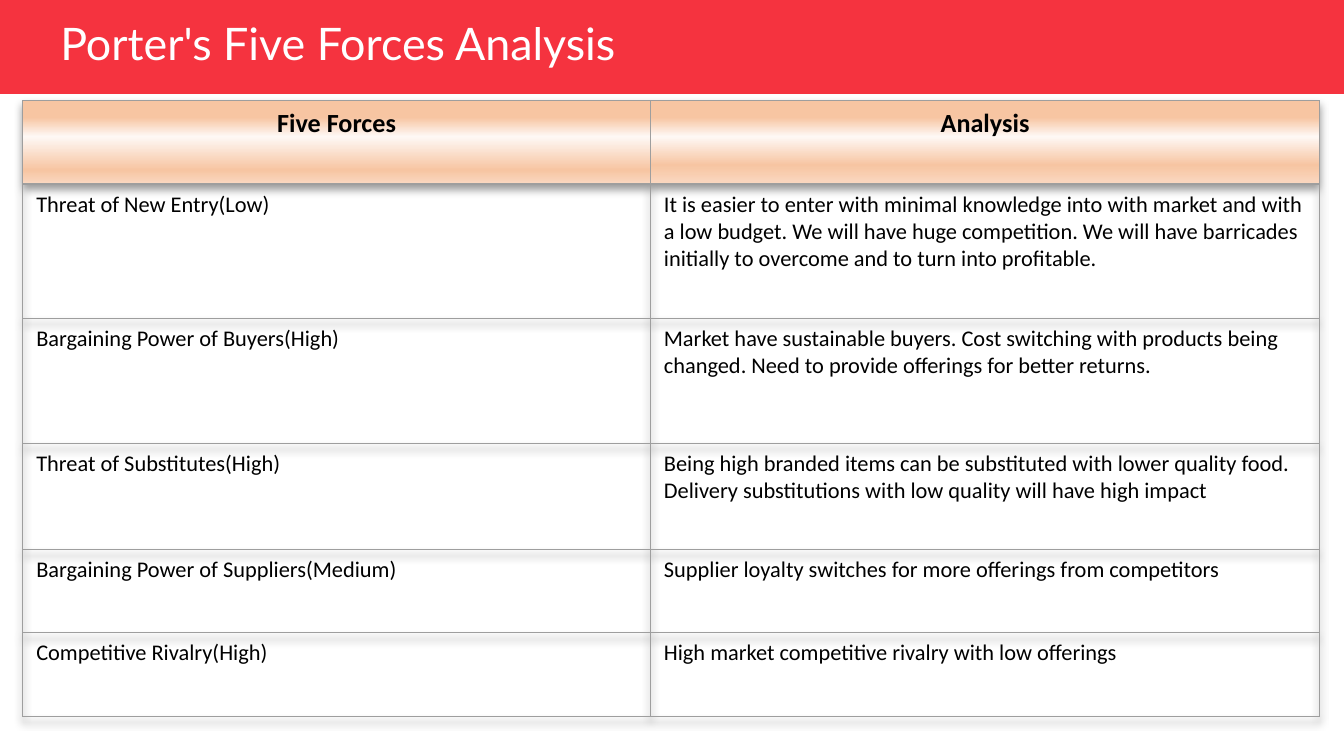
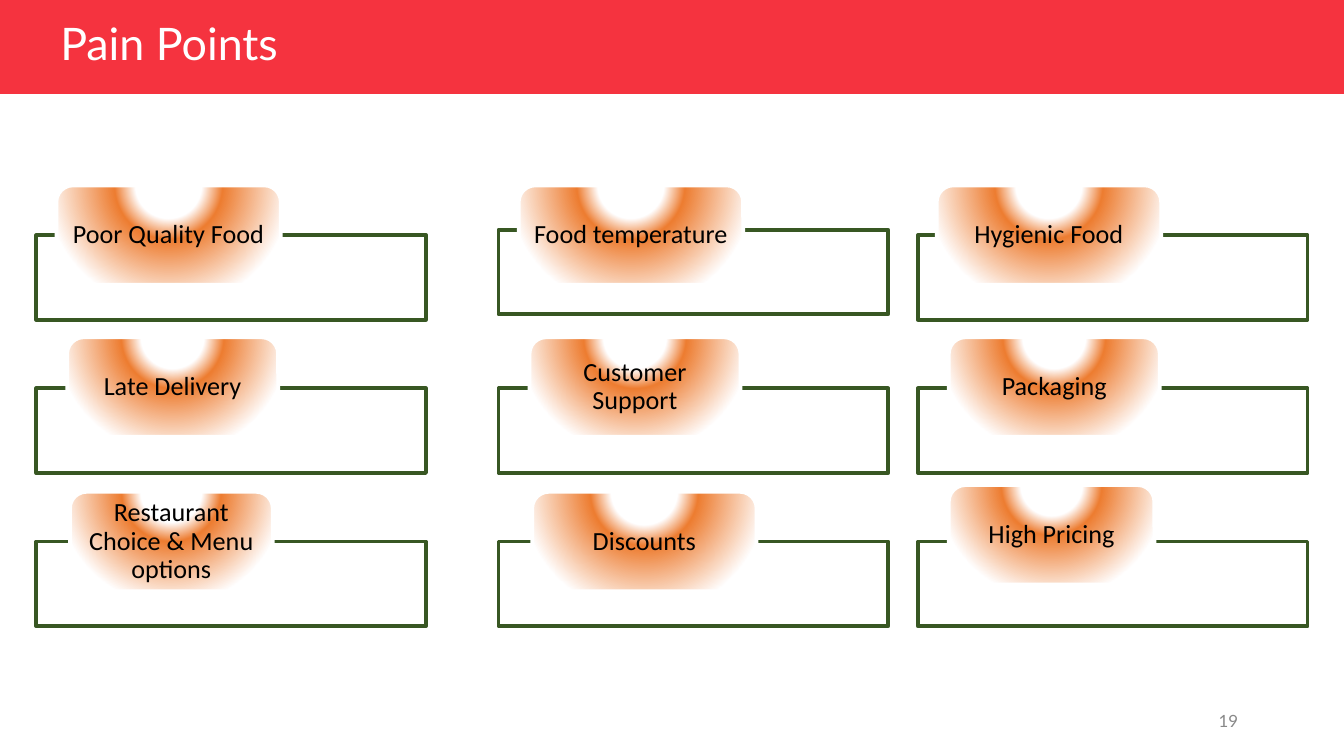
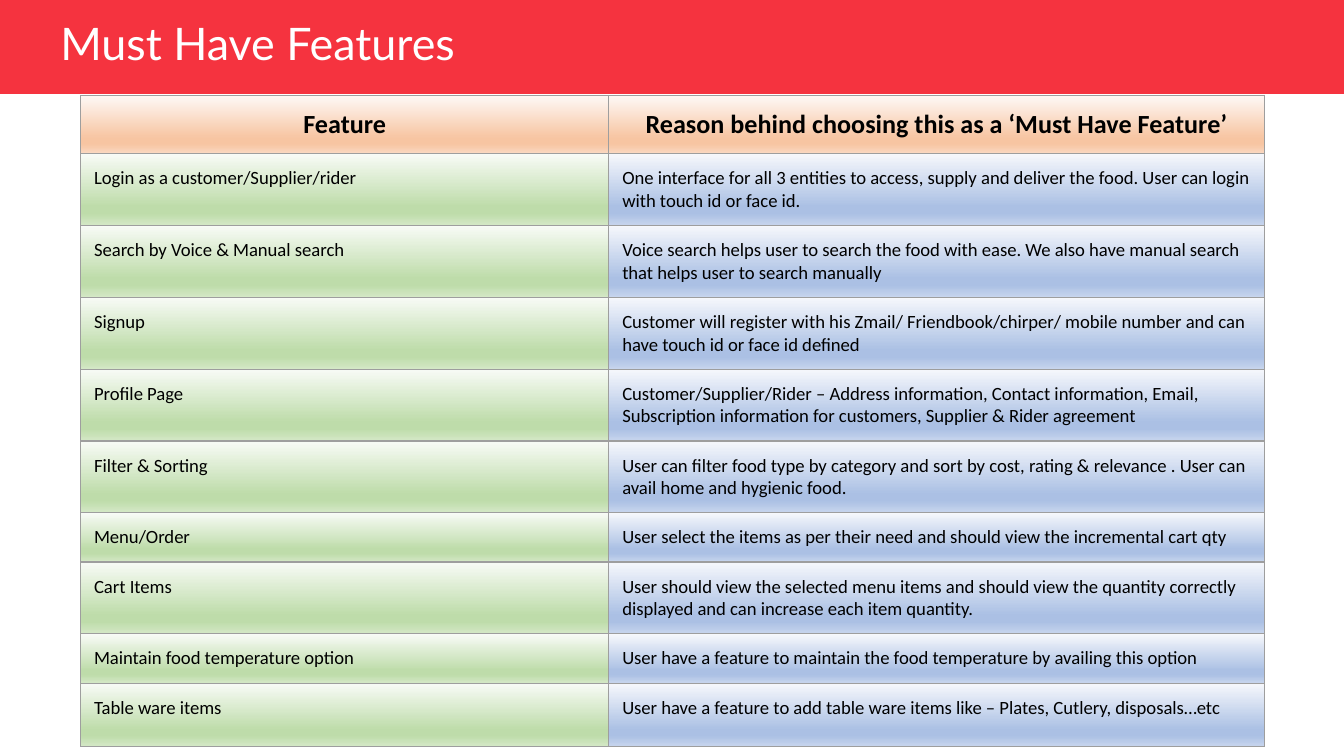
from lxml import etree
from pptx import Presentation
from pptx.dml.color import RGBColor
from pptx.enum.shapes import MSO_SHAPE
from pptx.enum.text import MSO_ANCHOR, PP_ALIGN
from pptx.oxml import parse_xml
from pptx.oxml.ns import qn
from pptx.util import Inches, Pt

RECT, ROUNDED = MSO_SHAPE.RECTANGLE, MSO_SHAPE.ROUNDED_RECTANGLE
LEFT, CENTER, RIGHT = PP_ALIGN.LEFT, PP_ALIGN.CENTER, PP_ALIGN.RIGHT
MIDDLE = MSO_ANCHOR.MIDDLE

RED = RGBColor(0xF5, 0x33, 0x3F)
WHITE = RGBColor(0xFF, 0xFF, 0xFF)
BLACK = RGBColor(0, 0, 0)
GRAY = RGBColor(0x88, 0x88, 0x88)
GRID = RGBColor(0x9E, 0x9E, 0x9E)
GREEN = RGBColor(0x38, 0x57, 0x23)
ORANGE = RGBColor(0xED, 0x7D, 0x31)
PEACH = [RGBColor.from_string(c) for c in ("FEF8F5", "F7C5A2", "FAD8C1")]
LEAF = [RGBColor.from_string(c) for c in ("F8FBF6", "BEDCAA", "D4E8C6")]
SKY = [RGBColor.from_string(c) for c in ("F6F8FC", "ABC0E4", "C7D5ED")]

TITLE = dict(name="Lato", size=Pt(24), color=WHITE)
PAGE = dict(name="Lato", size=Pt(9), color=GRAY)
HEADER = dict(name="Calibri", size=Pt(14), color=BLACK, bold=True)
LABEL = dict(name="Calibri", size=Pt(14), color=BLACK)

A_NS = "http://schemas.openxmlformats.org/drawingml/2006/main"
DOWN = '<a:lin ang="5400000" scaled="0"/>'
ARC = ('<a:path path="circle"><a:fillToRect l="50000" t="-80000" '
       'r="50000" b="180000"/></a:path>')

FORCES = [
    ("Five Forces", "Analysis"),
    ("Threat of New Entry(Low)",
     "It is easier to enter with minimal knowledge into with market and with a low budget. "
     "We will have huge competition. We will have barricades initially to overcome and to "
     "turn into profitable."),
    ("Bargaining Power of Buyers(High)",
     "Market have sustainable buyers. Cost switching with products being changed. "
     "Need to provide offerings for better returns."),
    ("Threat of Substitutes(High)",
     "Being high branded items can be substituted with lower quality food. "
     "Delivery substitutions with low quality will have high impact"),
    ("Bargaining Power of Suppliers(Medium)",
     "Supplier loyalty switches for more offerings from competitors"),
    ("Competitive Rivalry(High)", "High market competitive rivalry with low offerings"),
]

FEATURES = [
    ("Feature", "Reason behind choosing this as a ‘Must Have Feature’"),
    ("Login as a customer/Supplier/rider",
     "One interface for all 3 entities to access, supply and deliver the food. "
     "User can login with touch id or face id."),
    ("Search by Voice & Manual search",
     "Voice search helps user to search the food with ease. "
     "We also have manual search that helps user to search manually"),
    ("Signup",
     "Customer will register with his Zmail/ Friendbook/chirper/ mobile number and can "
     "have touch id or face id defined"),
    ("Profile Page",
     "Customer/Supplier/Rider – Address information, Contact information, Email, "
     "Subscription information for customers, Supplier & Rider agreement"),
    ("Filter & Sorting",
     "User can filter food type by category and sort by cost, rating & relevance . "
     "User can avail home and hygienic food."),
    ("Menu/Order",
     "User select the items as per their need and should view the incremental cart qty"),
    ("Cart Items",
     "User should view the selected menu items and should view the quantity correctly "
     "displayed and can increase each item quantity."),
    ("Maintain food temperature option",
     "User have a feature to maintain the food temperature by availing this option"),
    ("Table ware items",
     "User have a feature to add table ware items like – Plates, Cutlery, disposals…etc"),
]

# Each pain point: label, label indent, label width, frame top, label top
PAIN_COLUMNS = {
    0.27: [("Poor Quality Food", 0.15, 1.67, 1.75, 1.38),
           ("Late Delivery", 0.23, 1.57, 2.89, 2.51),
           ("Restaurant Choice & Menu options", 0.25, 1.51, 4.03, 3.66)],
    3.71: [("Food temperature", 0.15, 1.67, 1.71, 1.38),
           ("Customer Support", 0.23, 1.57, 2.89, 2.51),
           ("Discounts", 0.25, 1.67, 4.03, 3.66)],
    6.83: [("Hygienic Food", 0.14, 1.67, 1.75, 1.38),
           ("Packaging", 0.23, 1.57, 2.89, 2.51),
           ("High Pricing", 0.23, 1.53, 4.03, 3.61)],
}


def write(tf, text, style, align=LEFT, spacing=None):
    p = tf.paragraphs[0]
    p.alignment = align
    p.line_spacing = spacing
    r = p.add_run()
    r.text = text
    for key, value in style.items():
        if key == "color":
            r.font.color.rgb = value
        else:
            setattr(r.font, key, value)


def add_text(s, box, text, style, align=LEFT, spacing=None):
    tf = s.shapes.add_textbox(*map(Inches, box)).text_frame
    tf.word_wrap = True
    tf.vertical_anchor = MIDDLE
    write(tf, text, style, align, spacing)


def add_box(s, kind, box, line=None):
    sp = s.shapes.add_shape(kind, *map(Inches, box))
    sp.shadow.inherit = False
    if line is None:
        sp.line.fill.background()
    else:
        sp.line.color.rgb = line
        sp.line.width = Pt(2)
    return sp


def gradient(stops, direction):
    gs = "".join(f'<a:gs pos="{pos * 1000}"><a:srgbClr val="{color}"/></a:gs>'
                 for pos, color in stops)
    return parse_xml(f'<a:gradFill xmlns:a="{A_NS}" rotWithShape="1">'
                     f"<a:gsLst>{gs}</a:gsLst>{direction}</a:gradFill>")


def sheen(colors):
    """Stops of a vertical blend that is darkest near the bottom."""
    light, dark, end = colors
    return [(0, light), (74, dark), (83, dark), (100, end)]


def glow(dark_stop):
    """Stops of a vertical blend with a light stripe across it."""
    light, dark, end = PEACH
    return [(20, dark), (43, light), (dark_stop, dark), (100, end)]


def format_cell(cell, stops):
    tcPr = cell._tc.get_or_add_tcPr()
    for side in ("lnL", "lnR", "lnT", "lnB"):
        tcPr.append(parse_xml(
            f'<a:{side} xmlns:a="{A_NS}" w="9525"><a:solidFill>'
            f'<a:srgbClr val="{GRID}"/></a:solidFill></a:{side}>'))
    if stops:
        tcPr.append(gradient(stops, DOWN))
    else:
        cell.fill.background()


def add_grid(s, box, rows, widths, heights, size, header_fills, body_fills, pad):
    table = s.shapes.add_table(len(rows), len(widths), *map(Inches, box)).table
    table.first_row = table.horz_banding = False
    for column, width in zip(table.columns, widths):
        column.width = Inches(width)
    body = HEADER | dict(size=Pt(size), bold=False)
    for i, (texts, height) in enumerate(zip(rows, heights)):
        table.rows[i].height = Inches(height)
        fills, style, align = ((body_fills, body, LEFT) if i
                               else (header_fills, HEADER, CENTER))
        for j, text in enumerate(texts):
            cell = table.cell(i, j)
            cell.margin_left = cell.margin_right = Inches(0.1)
            cell.margin_top = cell.margin_bottom = Inches(pad)
            format_cell(cell, fills[j])
            write(cell.text_frame, text, style, align)
    return table


def add_table_shadow(table):
    tblPr = table._tbl.find(qn("a:tblPr"))
    tblPr.insert(0, parse_xml(
        f'<a:effectLst xmlns:a="{A_NS}"><a:outerShdw blurRad="50800" dist="38100" '
        'dir="5400000" algn="t" rotWithShape="0"><a:srgbClr val="000000">'
        '<a:alpha val="40000"/></a:srgbClr></a:outerShdw></a:effectLst>'))


def add_pain_point(s, left, text, indent, width, frame_top, label_top):
    frame = add_box(s, RECT, (left, frame_top, 2.9, 0.63), GREEN)
    frame.fill.solid()
    frame.fill.fore_color.rgb = WHITE
    color = frame._element.spPr.find(qn("a:solidFill"))[0]
    etree.SubElement(color, qn("a:alpha"), val="90000")

    label = add_box(s, ROUNDED, (left + indent, label_top, width, 0.74), WHITE)
    stops = [(27, WHITE), (44, ORANGE), (100, WHITE)]
    label._element.spPr.find(qn("a:prstGeom")).addnext(gradient(stops, ARC))
    tf = label.text_frame
    tf.word_wrap = True
    tf.vertical_anchor = MIDDLE
    tf.margin_left = tf.margin_right = Inches(0.07)
    tf.margin_top = tf.margin_bottom = 0
    write(tf, text, LABEL, CENTER, 0.9)


def new_slide(prs, title, title_width=4.09):
    s = prs.slides.add_slide(prs.slide_layouts[6])
    band = add_box(s, RECT, (0, 0, 10, 0.7))
    band.fill.solid()
    band.fill.fore_color.rgb = RED
    add_text(s, (0.35, 0.13, title_width, 0.42), title, TITLE, spacing=0.9)
    return s


def five_forces_slide(prs):
    s = new_slide(prs, "Porter's Five Forces Analysis", 4.65)
    table = add_grid(s, (0.17, 0.75, 9.65, 4.58), FORCES, (4.67, 4.98),
                     (0.62, 1, 0.93, 0.79, 0.62, 0.62), 12,
                     (glow(83), glow(77)), (None, None), 0.05)
    add_table_shadow(table)


def pain_points_slide(prs):
    s = new_slide(prs, "Pain Points")
    add_text(s, (7.06, 5.21, 2.25, 0.3), "19", PAGE, RIGHT)
    for left, points in PAIN_COLUMNS.items():
        for point in points:
            add_pain_point(s, left, *point)


def features_slide(prs):
    s = new_slide(prs, "Must Have Features")
    heights = [0.41] + [0.51] * 5 + [0.35, 0.51, 0.35, 0.47]
    add_grid(s, (0.6, 0.71, 8.81, 4.84), FEATURES, (3.93, 4.88), heights, 10,
             (sheen(PEACH), sheen(PEACH)), (sheen(LEAF), sheen(SKY)), 0.1)


def main():
    prs = Presentation()
    prs.slide_width = Inches(10)
    prs.slide_height = prs.slide_width * 9 // 16
    five_forces_slide(prs)
    pain_points_slide(prs)
    features_slide(prs)
    prs.save("out.pptx")


if __name__ == "__main__":
    main()
